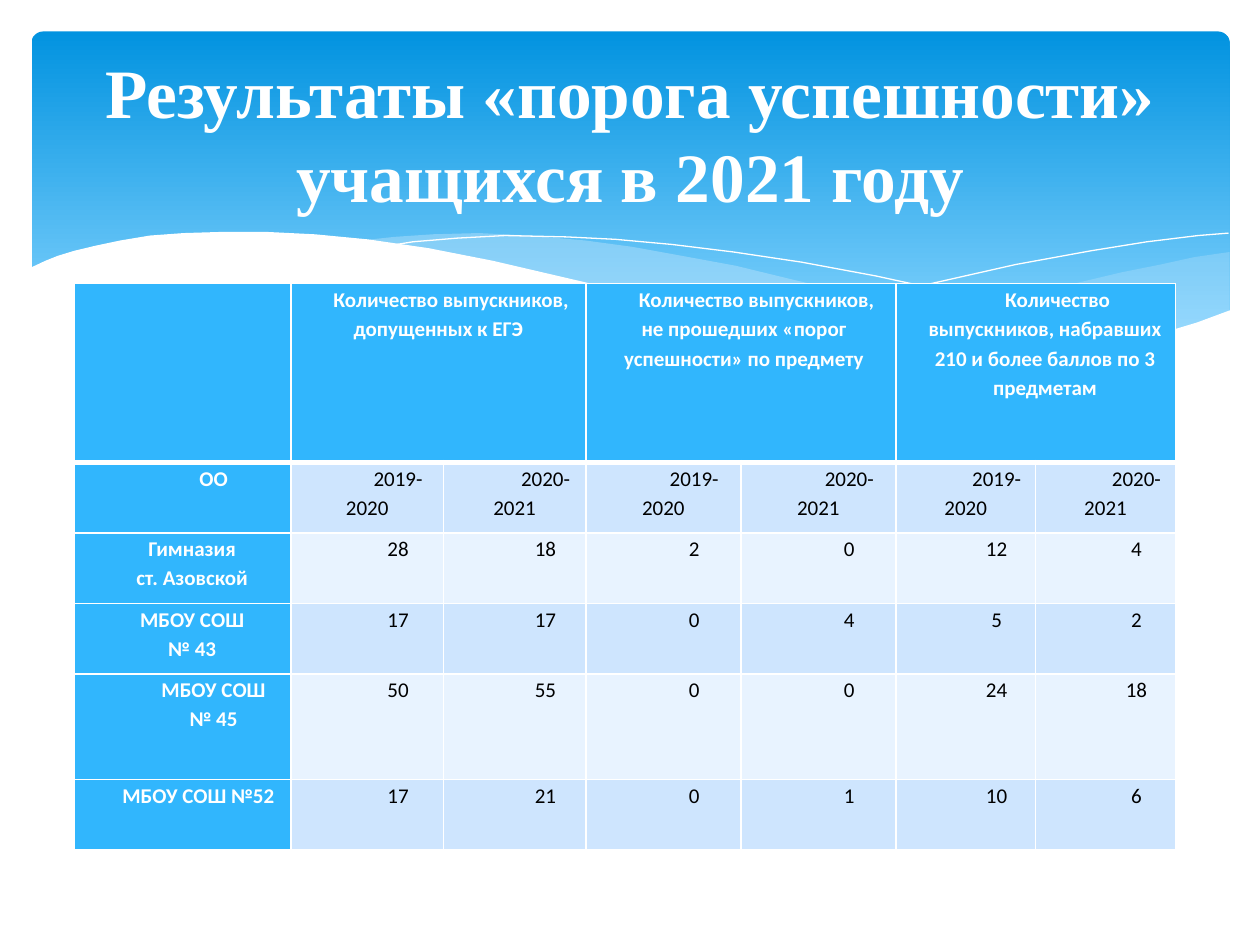
from lxml.etree import SubElement
from pptx import Presentation
from pptx.dml.color import RGBColor
from pptx.enum.shapes import MSO_SHAPE
from pptx.enum.text import MSO_ANCHOR, MSO_AUTO_SIZE, PP_ALIGN
from pptx.oxml.ns import qn
from pptx.util import Pt

COLORS = {"top": "0293E0", "low": "83D3FE", "mist": "C6E7FC", "white": "FFFFFF",
          "black": "000000", "head": "31B6FD", "dark": "CEE5FE", "light": "E8F3FF"}

RIGHT = [(684.7, 126), (664.6, 128.9), (645, 133.2), (623.5, 137.5), (602, 142.6),
         (561.6, 152.6), (524, 160.6), (490, 167), (458, 172.8), (479.5, 175.7),
         (509, 179.3), (535.7, 181.4), (568, 182.2), (597, 180.7), (622, 177.8),
         (645, 172.8), (665, 167), (684.7, 159.8)]
MIDDLE = [(625, 178.6), (584.6, 172.8), (540, 164.9), (490, 154.8), (435, 141.8),
          (402.5, 133.9), (371.5, 128.2), (343.4, 123.1), (316.8, 119.5),
          (284.4, 116.6), (255.6, 115.2), (229.7, 115.9), (207.4, 117.4),
          (188, 119.5), (214.6, 123.1), (242.6, 128.2), (272.9, 133.9),
          (305.3, 141.8), (363.6, 154.8), (414.7, 165.6), (460.8, 173.5),
          (501.8, 179.3), (538.6, 181.4), (571, 182.2), (599, 181.4)]
FALL = [(204.5, 122.4), (218, 120.2), (243.4, 118.1), (270.7, 116.6), (306, 117.4),
        (334, 118.8), (365.8, 121.7), (401, 126), (440, 131.8), (482.4, 139.7),
        (529, 149.8), (580, 162.7), (635, 177.8)]
RISE = [(423.4, 167), (452, 159), (482.4, 151.2), (520.6, 142.6), (562.3, 133.2),
        (605.5, 125.3), (637.2, 120.2), (666.7, 116.6), (684, 115.2)]
FRONT = [(685.4, 159.1), (666, 166.3), (644.4, 172.8), (620.6, 177.1), (594, 180),
         (564.5, 181.4), (530, 180), (491.8, 176.4), (448.6, 170.6), (399, 162),
         (344.2, 149.8), (303.8, 140.4), (263.5, 131), (226.8, 123.8),
         (192.2, 118.8), (162, 115.9), (133.9, 114.5), (109.4, 114.5), (87, 115.2),
         (67.7, 116.6), (50.4, 119.5), (36.7, 122.4), (24.5, 125.3), (15, 128.2),
         (8, 131), (-1.4, 135.4), (-1.4, 218.9), (685.4, 218.9)]

WIDTHS = [123.8, 87.1, 81.4, 88.6, 88.6, 79.9, 79.9]
HEIGHTS = [102.2, 40.3, 40.3, 40.3, 60.5, 40.3]
HEADS = [("Количество выпускников, допущенных к ЕГЭ", 0),
         ("Количество выпускников, не прошедших «порог успешности» по предмету", 3.6),
         ("Количество выпускников, набравших 210 и более баллов по 3 предметам", 10.8)]
ROWS = [("ОО", 35.3, ["2019-2020", "2020-2021"] * 3),
        ("Гимназия\nст. Азовской", 10.8, [28, 18, 2, 0, 12, 4]),
        ("МБОУ СОШ\n№ 43", 10.8, [17, 17, 0, 4, 5, 2]),
        ("МБОУ СОШ\n№ 45", 35.3, [50, 55, 0, 0, 24, 18]),
        ("МБОУ СОШ №52", 18, [17, 21, 0, 1, 10, 6])]


def tint(name):
    return RGBColor.from_string(COLORS[name])


def paint(fill, name):
    fill.solid()
    fill.fore_color.rgb = tint(name)


def add_wave(slide, box, dots, name=None, alpha=100):
    left, top = box[:2]
    spots = [(Pt(left + x), Pt(top + y)) for x, y in dots]
    pen = slide.shapes.build_freeform(*spots[0], scale=1.0)
    pen.add_line_segments(spots[1:], close=name is not None)
    wave = pen.convert_to_shape()
    wave.shadow.inherit = False
    if name is None:
        wave.fill.background()
        wave.line.color.rgb = tint("white")
        wave.line.width = Pt(0)
        return
    paint(wave.fill, name)
    wave.line.fill.background()
    if alpha < 100:
        shade = wave.element.spPr.find(qn("a:solidFill"))[0]
        SubElement(shade, qn("a:alpha"), val=str(alpha * 1000))


def add_banner(slide, box):
    panel = slide.shapes.add_shape(MSO_SHAPE.ROUNDED_RECTANGLE, *map(Pt, box))
    panel.adjustments[0] = 0.034
    panel.shadow.inherit = False
    panel.line.fill.background()
    panel.fill.gradient()
    panel.fill.gradient_angle = 270
    for stop, name, place in zip(panel.fill.gradient_stops, ("top", "low"), (0, 0.9)):
        stop.color.rgb = tint(name)
        stop.position = place
    add_wave(slide, box, RIGHT, "mist", 29)
    add_wave(slide, box, MIDDLE, "mist", 40)
    add_wave(slide, box, FALL)
    add_wave(slide, box, RISE)
    add_wave(slide, box, FRONT, "white")


def set_title(slide, box):
    title = slide.shapes.title
    slide.shapes.element.append(title.element)
    title.left, title.top, title.width, title.height = map(Pt, box)
    frame = title.text_frame
    frame.text = "Результаты «порога успешности»\vучащихся в 2021 году"
    frame.auto_size = MSO_AUTO_SIZE.NONE
    frame.vertical_anchor = MSO_ANCHOR.MIDDLE
    for para in frame.paragraphs:
        para.alignment = PP_ALIGN.CENTER
        for run in para.runs:
            font = run.font
            font.name, font.size, font.bold = "Times New Roman", Pt(39.6), True
            font.color.rgb = tint("white")


def edge_cell(cell, base):
    props = cell._tc.get_or_add_tcPr()
    for spot, side in enumerate(("lnL", "lnR", "lnT", "lnB")):
        wide = base if side == "lnB" else 1
        line = props.makeelement(qn(f"a:{side}"), {"w": str(Pt(wide))})
        fill = SubElement(line, qn("a:solidFill"))
        SubElement(fill, qn("a:srgbClr"), val=COLORS["white"])
        props.insert(spot, line)


def set_cell(cell, text, fill, indent, left=0, bold=True):
    cell.margin_left = cell.margin_right = Pt(5)
    cell.margin_top = cell.margin_bottom = 0
    paint(cell.fill, fill)
    cell.text_frame.text = text
    for para in cell.text_frame.paragraphs:
        para.alignment = PP_ALIGN.CENTER
        para.line_spacing = 1.15
        props = para._p.get_or_add_pPr()
        props.set("marL", str(Pt(left)))
        props.set("indent", str(Pt(indent)))
        for run in para.runs:
            font = run.font
            font.name, font.size, font.bold = "Calibri", Pt(12), bold
            font.color.rgb = tint("white" if bold else "black")


def add_scores(slide, box):
    size = len(HEIGHTS), len(WIDTHS)
    table = slide.shapes.add_table(*size, *map(Pt, box)).table
    for col, width in zip(table.columns, WIDTHS):
        col.width = Pt(width)
    for row, height in zip(table.rows, HEIGHTS):
        row.height = Pt(height)
    paint(table.cell(0, 0).fill, "head")
    for spot, (text, left) in enumerate(HEADS):
        first = table.cell(0, 2 * spot + 1)
        first.merge(table.cell(0, 2 * spot + 2))
        set_cell(first, text, "head", 14.4, left)
    for r, (name, indent, values) in enumerate(ROWS, 1):
        set_cell(table.cell(r, 0), name, "head", indent)
        for c, value in enumerate(values, 1):
            band = "dark" if r % 2 else "light"
            set_cell(table.cell(r, c), str(value), band, 35.3, bold=False)
    for r in range(size[0]):
        for c in range(size[1]):
            edge_cell(table.cell(r, c), 1 if r else 3)


def main():
    deck = Presentation()
    deck.slide_width, deck.slide_height = Pt(720), Pt(540)
    slide = deck.slides.add_slide(deck.slide_layouts[5])
    add_banner(slide, (18, 18, 684.7, 194.4))
    set_title(slide, (36, 26.6, 648, 98.6))
    add_scores(slide, (42.5, 162, 629.3, 323.9))
    deck.save("out.pptx")


if __name__ == "__main__":
    main()
